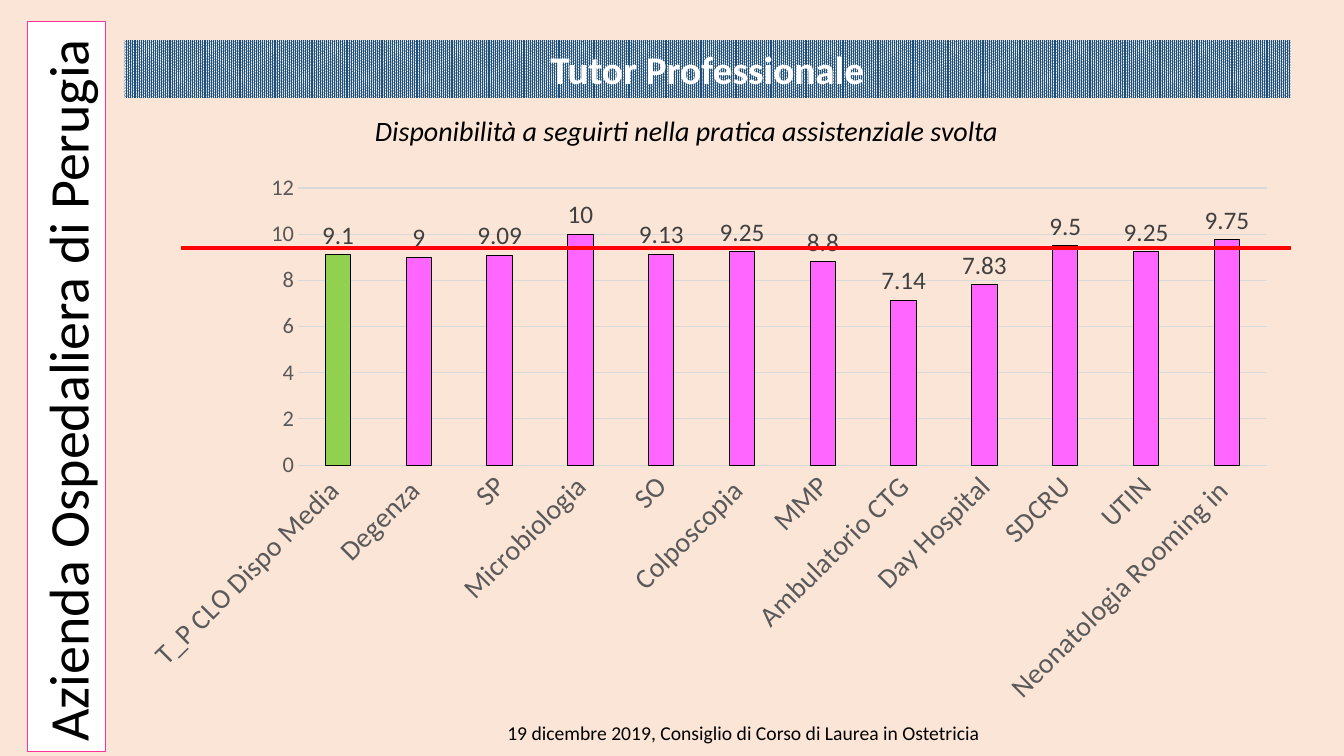
from pptx import Presentation
from pptx.chart.data import CategoryChartData
from pptx.dml.color import RGBColor
from pptx.enum.chart import XL_CHART_TYPE, XL_LABEL_POSITION, XL_TICK_MARK
from pptx.enum.dml import MSO_PATTERN
from pptx.enum.shapes import MSO_CONNECTOR
from pptx.enum.text import MSO_ANCHOR, MSO_AUTO_SIZE, PP_ALIGN
from pptx.oxml import parse_xml
from pptx.oxml.ns import nsdecls
from pptx.util import Inches, Pt
from dataclasses import dataclass

TITLE = "Tutor Professionale"
SUBTITLE = "Disponibilità a seguirti nella pratica assistenziale svolta"
SIDEBAR = "Azienda Ospedaliera di Perugia"
FOOTER = "19 dicembre 2019, Consiglio di Corso di Laurea in Ostetricia"
SCORES = [
    ("T_P CLO Dispo Media ", 9.1),
    ("Degenza ", 9),
    ("SP", 9.09),
    ("Microbiologia", 10),
    ("SO", 9.13),
    ("Colposcopia ", 9.25),
    ("MMP", 8.8),
    ("Ambulatorio CTG", 7.14),
    ("Day Hospital", 7.83),
    ("SDCRU", 9.5),
    ("UTIN", 9.25),
    ("Neonatologia Rooming in ", 9.75),
]


@dataclass(frozen=True)
class Theme:
    font: str = "Calibri"
    page: str = "FBE5D6"
    ink: str = "000000"
    white: str = "FFFFFF"
    band: str = "1F4E79"
    side_line: str = "FF3399"
    bar: str = "FF66FF"
    mean_bar: str = "92D050"
    threshold: str = "FF0000"
    grid: str = "D9D9D9"
    axis: str = "595959"
    label: str = "404040"
    side_size: int = 40
    title_size: int = 28
    text_size: int = 20
    label_size: int = 18
    scale_size: int = 16
    footer_size: int = 14
    chart_size: int = 10


T = Theme()
LEFT, WIDTH = 1.23, 11.57
RIGHT = LEFT + WIDTH


def rgb(color):
    return RGBColor.from_string(color)


def style_font(font, size, color, bold=False, italic=False):
    font.name, font.size = T.font, Pt(size)
    font.bold, font.italic = bold, italic
    font.color.rgb = rgb(color)


def style_line(line, color, width=0.75):
    line.color.rgb = rgb(color)
    line.width = Pt(width)


def write(sp, text, size, color=T.ink, bold=False, italic=False,
          align=PP_ALIGN.CENTER, wrap=True, fit=MSO_AUTO_SIZE.SHAPE_TO_FIT_TEXT):
    tf = sp.text_frame
    tf.word_wrap = wrap
    tf.auto_size = fit
    tf.vertical_anchor = MSO_ANCHOR.TOP
    p = tf.paragraphs[0]
    p.alignment = align
    r = p.add_run()
    r.text = text
    style_font(r.font, size, color, bold, italic)


def box(s, left, top, width, height):
    return s.shapes.add_textbox(Inches(left), Inches(top), Inches(width), Inches(height))


def add_title(s):
    sp = s.shapes.title
    sp.left, sp.top = Inches(LEFT), Inches(0.4)
    sp.width, sp.height = Inches(WIDTH), Inches(0.57)
    sp.fill.patterned()
    sp.fill.pattern = MSO_PATTERN.PERCENT_90
    sp.fill.fore_color.rgb = rgb(T.band)
    sp.fill.back_color.rgb = rgb(T.white)
    write(sp, TITLE, T.title_size, T.white, bold=True, fit=MSO_AUTO_SIZE.NONE)


def add_sidebar(s):
    sp = box(s, -2.96, 3.45, 7.24, 0.77)
    sp.rotation = 270
    sp.fill.solid()
    sp.fill.fore_color.rgb = rgb(T.white)
    style_line(sp.line, T.side_line)
    write(sp, SIDEBAR, T.side_size, align=PP_ALIGN.LEFT, wrap=False)


def add_scores(s):
    data = CategoryChartData()
    data.categories = [name for name, score in SCORES]
    data.add_series("Series 1", [score for name, score in SCORES])
    chart = s.shapes.add_chart(
        XL_CHART_TYPE.COLUMN_CLUSTERED, Inches(LEFT), Inches(1.62),
        Inches(WIDTH), Inches(5.48), data).chart
    chart.has_title = chart.has_legend = False
    style_font(chart.font, T.chart_size, T.ink)

    cat, val = chart.category_axis, chart.value_axis
    for axis, size in ((cat, T.text_size), (val, T.scale_size)):
        axis.major_tick_mark = axis.minor_tick_mark = XL_TICK_MARK.NONE
        style_font(axis.tick_labels.font, size, T.axis)
    style_line(cat.format.line, T.grid)
    cat._element.txPr.bodyPr.set("rot", "-2700000")
    val.minimum_scale, val.maximum_scale, val.major_unit = 0, 12, 2
    val.format.line.fill.background()
    style_line(val.major_gridlines.format.line, T.grid)

    plot = chart.plots[0]
    plot.vary_by_categories = False
    plot.gap_width, plot.overlap = 219, -27
    series = plot.series[0]
    for part, color in ((series, T.bar), (series.points[0], T.mean_bar)):
        part.format.fill.solid()
        part.format.fill.fore_color.rgb = rgb(color)
        style_line(part.format.line, T.ink)
    labels = series.data_labels
    labels.show_value = True
    labels.position = XL_LABEL_POSITION.OUTSIDE_END
    style_font(labels.font, T.label_size, T.label)


def add_threshold(s):
    line = s.shapes.add_connector(
        MSO_CONNECTOR.STRAIGHT, Inches(1.8), Inches(2.46), Inches(RIGHT), Inches(2.46))
    style_line(line.line, T.threshold, 2.25)
    line._element.spPr.append(parse_xml(f"<a:effectLst {nsdecls('a')}/>"))


def main():
    prs = Presentation()
    prs.slide_width, prs.slide_height = Inches(13.33), Inches(7.5)
    s = prs.slides.add_slide(prs.slide_layouts[5])
    s.background.fill.solid()
    s.background.fill.fore_color.rgb = rgb(T.page)
    add_title(s)
    write(box(s, 1.8, 1.08, 10.02, 0.44), SUBTITLE, T.text_size, italic=True)
    add_sidebar(s)
    add_scores(s)
    add_threshold(s)
    write(box(s, 3.95, 7.1, 6.85, 0.34), FOOTER, T.footer_size)
    prs.save("out.pptx")


if __name__ == "__main__":
    main()
